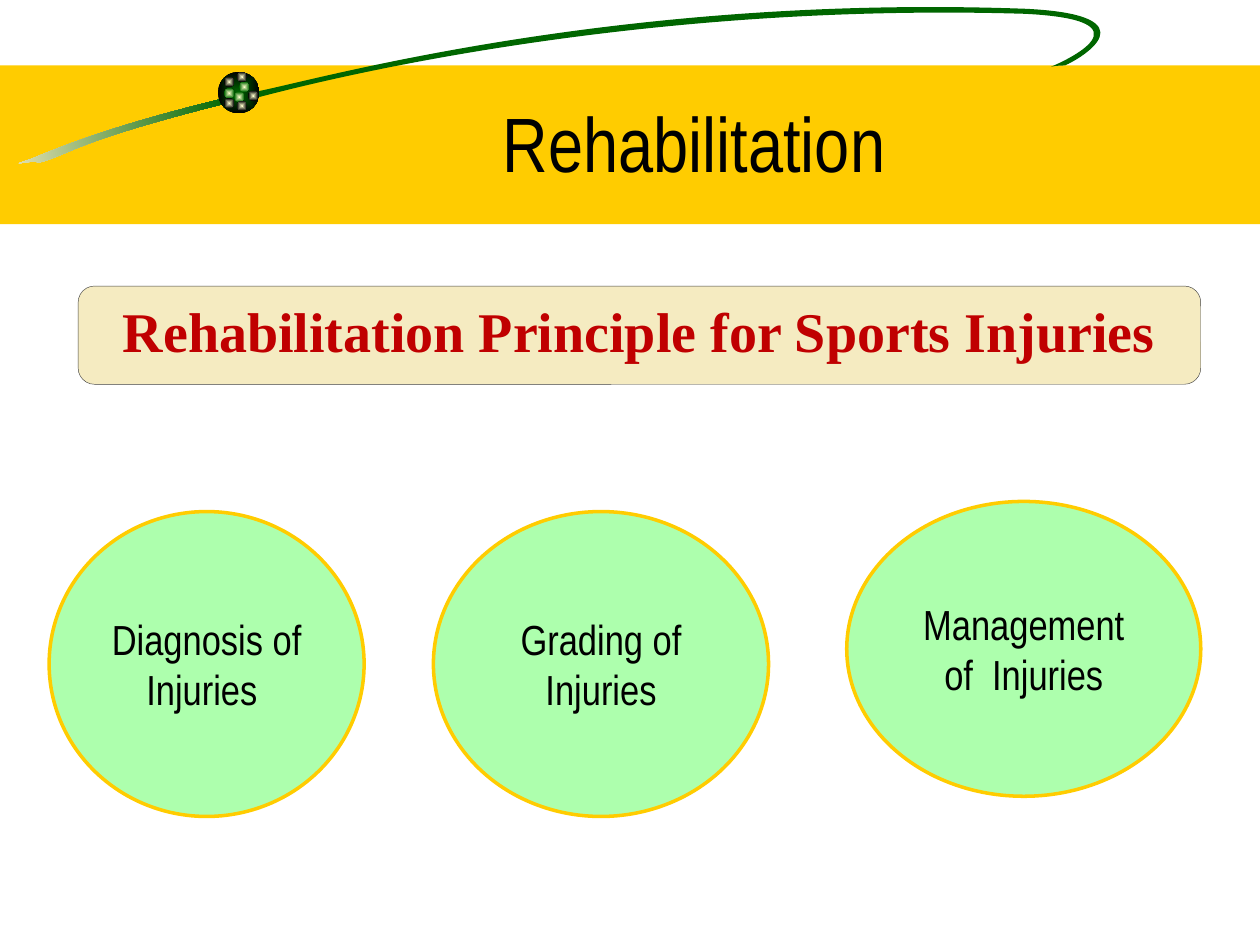
from math import cos, radians, sin

from lxml import etree
from pptx import Presentation
from pptx.dml.color import RGBColor
from pptx.enum.shapes import MSO_SHAPE
from pptx.enum.text import MSO_ANCHOR, PP_ALIGN
from pptx.oxml.ns import qn
from pptx.util import Inches, Pt

RECT, OVAL, ROUND = MSO_SHAPE.RECTANGLE, MSO_SHAPE.OVAL, MSO_SHAPE.ROUNDED_RECTANGLE
TOP, MIDDLE = MSO_ANCHOR.TOP, MSO_ANCHOR.MIDDLE
WIDTH, HEIGHT = 10, 7.5
GOLD, GREEN, CREAM, BLACK, PALE = "FFCC00", "006600", "F5EBC1", "000000", "FFFFCC"

TITLE = "Rehabilitation"
BANNER = "Rehabilitation Principle for Sports Injuries"
TOPICS = [  # text, (left, top, width, height)
    ("Diagnosis of Injuries ", (0.39, 4.06, 2.5, 2.42)),
    ("Grading of Injuries", (3.44, 4.06, 2.66, 2.42)),
    ("Management of  Injuries", (6.72, 3.98, 2.81, 2.34)),
]

# Outlines: a start point, then three points for each cubic curve
TILT = -8.5
TAIL_CENTER, SWOOSH_CENTER = (0.89, 1.06), (5.59, 0.4)
TAIL = [(1.78, 0.78),
        (0.91, 0.99), (0.49, 1.16), (0.25, 1.26),
        (0.01, 1.34), (0.26, 1.26), (0.31, 1.29),
        (0.57, 1.22), (0.57, 1.13), (1.79, 0.82),
        (1.79, 0.82), (1.78, 0.78), (1.78, 0.78)]
SWOOSH = [(2.02, 0.73),
          (2.46, 0.65), (4.86, -0.05), (8.14, 0.07),
          (9.17, 0.12), (8.57, 0.47), (8.45, 0.52),
          (8.45, 0.52), (8.38, 0.52), (8.34, 0.53),
          (8.44, 0.49), (9.17, 0.16), (8.13, 0.11),
          (5.48, 0.03), (3.2, 0.47), (2.06, 0.77),
          (2.06, 0.77), (2.02, 0.73), (2.02, 0.73)]
BALL = (1.73, 0.57, 0.33, 0.33)
DOT = 0.08
DOTS = [(1.9, 0.65, GREEN), (1.78, 0.61, BLACK), (1.78, 0.7, GREEN),
        (1.86, 0.73, GREEN), (1.97, 0.72, BLACK), (1.88, 0.8, BLACK),
        (1.78, 0.78, BLACK), (1.88, 0.57, BLACK)]


def rgb(color):
    return RGBColor.from_string(color)


def paint(s, fill, line=None, weight=1, radial=False):
    """Fill with one colour, or with a gradient for a pair of colours."""
    s.shadow.inherit = False
    if isinstance(fill, tuple):
        s.fill.gradient()
        s.fill.gradient_angle = 0
        for stop, color, position in zip(s.fill.gradient_stops, fill, (0, 1)):
            stop.color.rgb = rgb(color)
            stop.position = position
        if radial:
            grad = s._element.spPr.find(qn("a:gradFill"))
            grad.remove(grad.find(qn("a:lin")))
            shape_path = etree.SubElement(grad, qn("a:path"), path="shape")
            etree.SubElement(shape_path, qn("a:fillToRect"),
                             {side: "50000" for side in "ltrb"})
    else:
        s.fill.solid()
        s.fill.fore_color.rgb = rgb(fill)
    if line:
        s.line.color.rgb = rgb(line)
        s.line.width = Pt(weight)
    else:
        s.line.fill.background()


def add_shape(kind, box, fill, **style):
    s = slide.shapes.add_shape(kind, *map(Inches, box))
    paint(s, fill, **style)
    return s


def add_curves(outline, center, fill):
    """Level the outline about its center, draw its curves, then tilt the shape."""
    cx, cy = center
    c, n = cos(radians(-TILT)), sin(radians(-TILT))
    start, *points = [(Inches(cx + (x - cx) * c - (y - cy) * n),
                       Inches(cy + (x - cx) * n + (y - cy) * c))
                      for x, y in outline]
    builder = slide.shapes.build_freeform(*start)
    builder.add_line_segments(points, close=True)
    s = builder.convert_to_shape()
    # Regroup every three straight segments as one cubic curve
    segments = list(s._element.iter(qn("a:lnTo")))
    for i in range(0, len(points), 3):
        curve = etree.Element(qn("a:cubicBezTo"))
        segments[i].addprevious(curve)
        for segment in segments[i:i + 3]:
            curve.append(segment[0])
    for segment in segments:
        segment.getparent().remove(segment)
    s.rotation = TILT
    paint(s, fill)


def write(s, text, size, font="Arial Narrow", color=BLACK, bold=False, anchor=MIDDLE):
    tf = s.text_frame
    tf.word_wrap = True
    tf.vertical_anchor = anchor
    p = tf.paragraphs[0]
    p.alignment = PP_ALIGN.CENTER
    r = p.add_run()
    r.text = text
    r.font.name, r.font.size, r.font.bold = font, Pt(size), bold
    r.font.color.rgb = rgb(color)


prs = Presentation()
prs.slide_width, prs.slide_height = Inches(WIDTH), Inches(HEIGHT)
slide = prs.slides.add_slide(prs.slide_layouts[5])

add_shape(RECT, (0, 0.52, WIDTH, 1.26), GOLD)
add_curves(TAIL, TAIL_CENTER, (CREAM, GREEN))
add_curves(SWOOSH, SWOOSH_CENTER, GREEN)
add_shape(OVAL, BALL, (GREEN, BLACK), radial=True)
for x, y, edge in DOTS:
    add_shape(OVAL, (x, y, DOT, DOT), (PALE, edge), radial=True)

title = slide.shapes.title
title.left, title.top, title.width, title.height = map(Inches, (1.26, 0.5, 8.5, 1.25))
write(title, TITLE, 44)
slide.shapes._spTree.append(title._element)  # bring in front of the band

banner = add_shape(ROUND, (0.62, 2.27, 8.91, 0.78), CREAM, line="424242", weight=0.25)
write(banner, BANNER, 32, font="Times New Roman", color="C00000", bold=True, anchor=TOP)

for text, box in TOPICS:
    write(add_shape(OVAL, box, "ADFFAD", line=GOLD, weight=2), text, 24)

prs.save("out.pptx")
